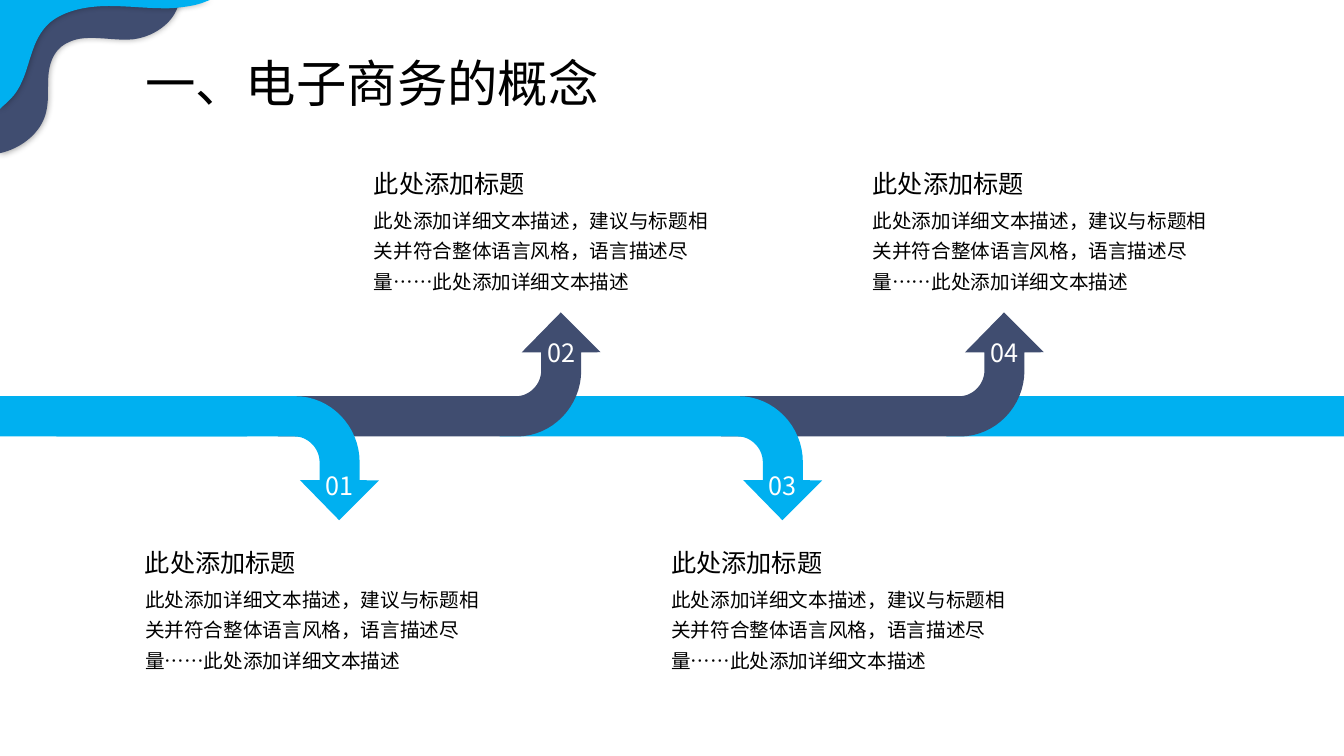
import pptx
import pptx.dml.color
import pptx.enum.shapes
import pptx.enum.text
import pptx.oxml
import pptx.oxml.ns
import pptx.util
from pptx.util import Pt

BLUE = pptx.dml.color.RGBColor(0x00, 0xB0, 0xF0)
NAVY = pptx.dml.color.RGBColor(0x40, 0x4D, 0x70)
BLACK = pptx.dml.color.RGBColor(0x00, 0x00, 0x00)
WHITE = pptx.dml.color.RGBColor(0xFF, 0xFF, 0xFF)

SLIDE_WIDTH, SLIDE_HEIGHT = 960, 540
BAND_TOP, BAND_HEIGHT = 283, 28.8
BAND_MIDDLE = BAND_TOP + BAND_HEIGHT / 2
ARROW_TOP, FIRST_ARROW_LEFT, ARROW_STEP = 223.2, 40.3, 158.3

NAVY_WAVE = [
    (38, 0), (128, 0),
    (126.7, 13.7, 112.3, 25.9, 95, 28.1), (79.2, 29.5, 61.9, 23.8, 49, 30.2),
    (38.9, 34.6, 35.3, 44.6, 34.6, 54), (33.8, 63.4, 35.3, 72.7, 32.4, 82.1),
    (28.8, 94.3, 17.3, 104.4, 2.9, 108.7), (0, 109.4), (0, 60.5), (3.6, 58.3),
    (10.1, 54, 15.8, 49, 19.4, 43.2), (26.6, 31, 28.1, 16.6, 34.6, 5),
]
BLUE_WAVE = [
    (0, 0), (149.8, 0), (146.2, 1.4),
    (139, 4.3, 131, 5, 123.8, 5.8), (108.7, 6.5, 93.6, 4.3, 77.8, 4.3),
    (62.6, 4.3, 46.8, 7.2, 36, 15.8), (20.9, 28.8, 22.3, 49, 12.2, 64.8),
    (9.4, 69.1, 5.8, 72.7, 1.4, 76.3), (0, 77.8),
]
ARROW = [
    (202, 0), (174, 28.6), (188, 28.6), (188, 41.5),
    (188, 52, 179, 59.8, 170.5, 59.8), (0, 59.8), (0, 88.6), (170.5, 88.6),
    (196, 88.6, 216.6, 67, 216.6, 41.5), (216.6, 28.6), (230.4, 28.4),
]

HEADING = "此处添加标题"
DESCRIPTION = "此处添加详细文本描述，建议与标题相关并符合整体语言风格，语言描述尽量……此处添加详细文本描述"
STEPS = [
    ("01", 96.5, 387.4),
    ("02", 260, 116.6),
    ("03", 472.3, 387.4),
    ("04", 616.3, 116.6),
]


def trace(outline, steps=16):
    points = []
    for segment in outline:
        if len(segment) == 2:
            points.append(segment)
            continue
        x0, y0 = points[-1]
        x1, y1, x2, y2, x3, y3 = segment
        for step in range(1, steps + 1):
            t = step / steps
            a, b, c, d = (1 - t) ** 3, 3 * t * (1 - t) ** 2, 3 * t * t * (1 - t), t ** 3
            points.append((a * x0 + b * x1 + c * x2 + d * x3, a * y0 + b * y1 + c * y2 + d * y3))
    return points


class Deck:
    font_name = "Noto Sans CJK SC"

    def __init__(self):
        self.presentation = pptx.Presentation()
        self.presentation.slide_width = Pt(SLIDE_WIDTH)
        self.presentation.slide_height = Pt(SLIDE_HEIGHT)
        self.slide = self.presentation.slides.add_slide(self.presentation.slide_layouts[6])

    def paint(self, shape, color):
        shape.shadow.inherit = False
        shape.fill.solid()
        shape.fill.fore_color.rgb = color
        shape.line.fill.background()
        return shape

    def bar(self, left, width, color):
        kind = pptx.enum.shapes.MSO_SHAPE.RECTANGLE
        shape = self.slide.shapes.add_shape(kind, Pt(left), Pt(BAND_TOP), Pt(width), Pt(BAND_HEIGHT))
        return self.paint(shape, color)

    def outline(self, points, color):
        corners = [(Pt(x), Pt(y)) for x, y in points]
        builder = self.slide.shapes.build_freeform(*corners[0], scale=1.0)
        builder.add_line_segments(corners[1:], close=True)
        return self.paint(builder.convert_to_shape(), color)

    def wave(self, outline, color):
        shape = self.outline(trace(outline), color)
        effects = shape.element.spPr.find(pptx.oxml.ns.qn("a:effectLst"))
        effects.append(pptx.oxml.parse_xml(
            f'<a:outerShdw {pptx.oxml.ns.nsdecls("a")} blurRad="{Pt(5)}" dist="0" algn="ctr" rotWithShape="0">'
            '<a:srgbClr val="000000"><a:alpha val="40000"/></a:srgbClr></a:outerShdw>'
        ))

    def arrow(self, left, upward, color):
        points = [(left + x, ARROW_TOP + y) for x, y in trace(ARROW)]
        if not upward:
            points = [(x, 2 * BAND_MIDDLE - y) for x, y in points]
        self.outline(points, color)

    def text(self, words, left, top, width, height, size, color=BLACK, spacing=None, label=False):
        box = self.slide.shapes.add_textbox(Pt(left), Pt(top), Pt(width), Pt(height))
        frame = box.text_frame
        frame.text = words
        frame.word_wrap = not label
        frame.auto_size = pptx.enum.text.MSO_AUTO_SIZE.SHAPE_TO_FIT_TEXT
        paragraph = frame.paragraphs[0]
        if spacing:
            paragraph.line_spacing = spacing
        if label:
            paragraph.alignment = pptx.enum.text.PP_ALIGN.CENTER
        font = paragraph.runs[0].font
        font.size = Pt(size)
        font.color.rgb = color
        font.name = self.font_name
        properties = paragraph.runs[0]._r.get_or_add_rPr()
        east_asian = properties.makeelement(pptx.oxml.ns.qn("a:ea"), {"typeface": self.font_name})
        properties.append(east_asian)


def main():
    deck = Deck()
    deck.wave(NAVY_WAVE, NAVY)
    deck.wave(BLUE_WAVE, BLUE)
    deck.text("一、电子商务的概念", 96.5, 27.4, 362, 54.7, 36, spacing=1.14)

    deck.bar(676, SLIDE_WIDTH - 676, BLUE)
    deck.bar(0, 176.5, BLUE)
    for index in reversed(range(len(STEPS))):
        upward = index % 2 == 1
        deck.arrow(FIRST_ARROW_LEFT + index * ARROW_STEP, upward, NAVY if upward else BLUE)

    for index, (number, left, top) in enumerate(STEPS):
        label_left = FIRST_ARROW_LEFT + index * ARROW_STEP + 185
        label_top = 237.2 if index % 2 else 332.6
        deck.text(number, label_left, label_top, 34.6, 28.8, 18, WHITE, label=True)
        deck.text(DESCRIPTION, left, top + 23.8, 258.5, 72, 14, spacing=1.3)
        deck.text(HEADING, left, top, 161.3, 28.8, 18)

    deck.presentation.save("out.pptx")


if __name__ == "__main__":
    main()
